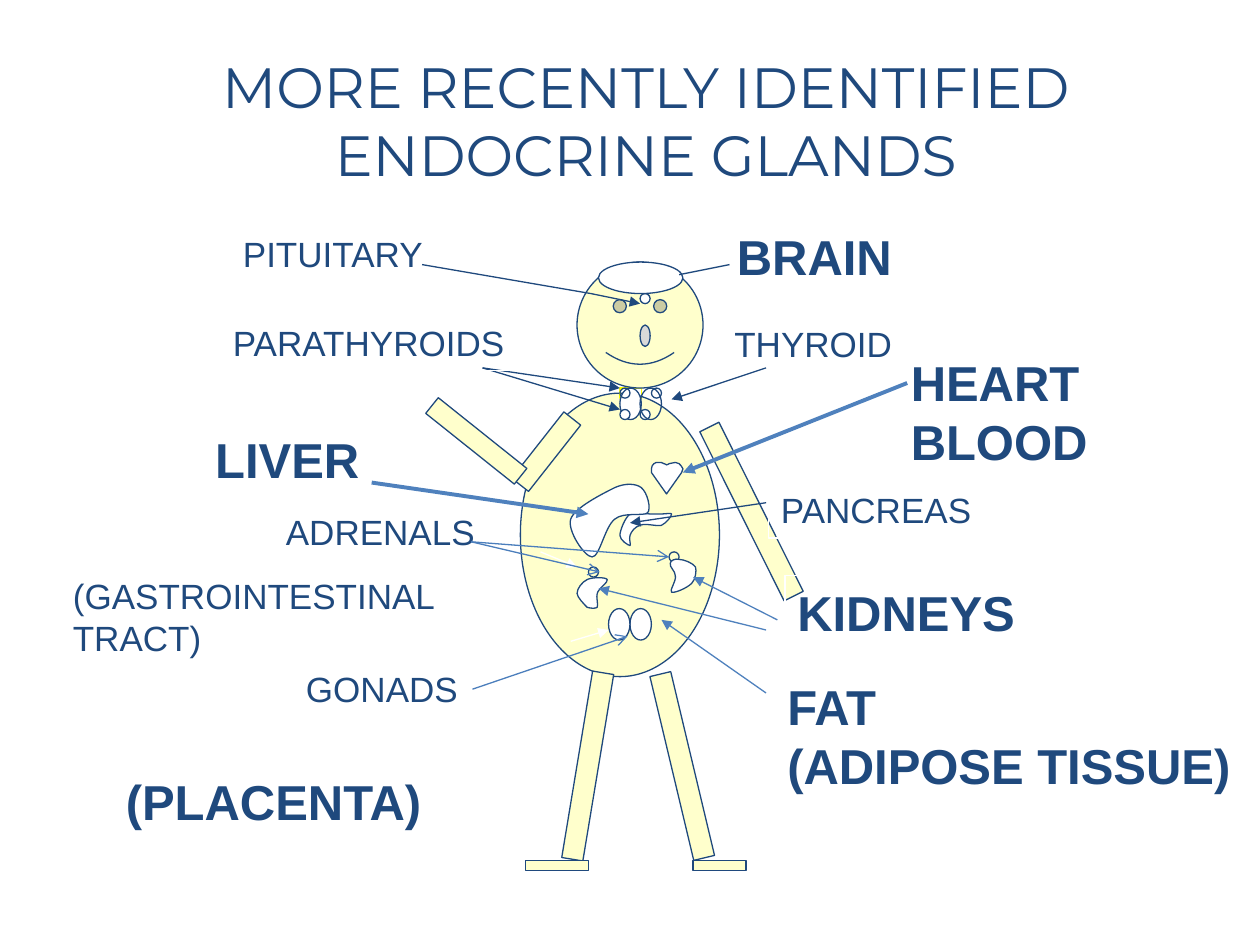
from dataclasses import dataclass

from lxml import etree
from pptx import Presentation
from pptx import util as u
from pptx.dml.color import RGBColor
from pptx.enum import shapes, text
from pptx.oxml import ns


@dataclass(frozen=True)
class Theme:
    navy: str = "1F497D"
    blue: str = "4F81BD"
    soft_blue: str = "4B7EBC"
    skin: str = "FFFFCC"
    white: str = "FFFFFF"
    yellow: str = "FFFF00"
    gray: str = "D9D9D9"
    title_font: str = "Montserrat"
    label_font: str = "Arial"
    title_size: float = 32.4
    label_size: float = 20
    strong_size: float = 28
    thin: float = 0.75
    thick: float = 2.25


theme = Theme()


def style_shape(shape, fill=None, line=theme.navy):
    """Set a flat fill (none when omitted) and a thin outline without shadow."""
    shape.shadow.inherit = False
    if fill:
        shape.fill.solid()
        shape.fill.fore_color.rgb = RGBColor.from_string(fill)
    else:
        shape.fill.background()
    shape.line.color.rgb = RGBColor.from_string(line)
    shape.line.width = u.Pt(theme.thin)


def add_label(words, left, top, width, height, strong=False):
    box = slide.shapes.add_textbox(*map(u.Inches, (left, top, width, height)))
    style_shape(box, line=theme.white)
    frame = box.text_frame
    frame.word_wrap = False
    frame.auto_size = text.MSO_AUTO_SIZE.SHAPE_TO_FIT_TEXT
    frame.text = words
    for paragraph in frame.paragraphs:
        font = paragraph.runs[0].font
        font.name = theme.label_font
        font.size = u.Pt(theme.strong_size if strong else theme.label_size)
        font.bold = strong
        font.color.rgb = RGBColor.from_string(theme.navy)


presentation = Presentation()
presentation.slide_width = u.Inches(10)
presentation.slide_height = u.Inches(7.5)
slide = presentation.slides.add_slide(presentation.slide_layouts[5])

# Title
title = slide.shapes.title
title.left, title.top, title.width, title.height = map(u.Inches, (0.25, 0.33, 9.75, 1.25))
title.fill.solid()
title.fill.fore_color.rgb = RGBColor.from_string(theme.white)
title.text_frame.text = "MORE RECENTLY IDENTIFIED ENDOCRINE GLANDS"
title.text_frame.word_wrap = True
title.text_frame.auto_size = text.MSO_AUTO_SIZE.NONE
title.text_frame.vertical_anchor = text.MSO_ANCHOR.MIDDLE
title_paragraph = title.text_frame.paragraphs[0]
title_paragraph.alignment = text.PP_ALIGN.CENTER
title_font = title_paragraph.runs[0].font
title_font.name = theme.title_font
title_font.size = u.Pt(theme.title_size)
title_font.color.rgb = RGBColor.from_string(theme.navy)

# Body and round glands
rectangle = shapes.MSO_SHAPE.RECTANGLE
oval = shapes.MSO_SHAPE.OVAL
smiley = shapes.MSO_SHAPE.SMILEY_FACE
dot = (0.08, 0.08)
lobe = (0.17, 0.25)
body_parts = [  # kind, box, rotation, fill, line
    (oval, (4.13, 3.12, 1.58, 2.25), 0, theme.skin, theme.navy),  # trunk
    (rectangle, (4.92, 3.08, 0.17, 0.08), 0, None, theme.yellow),  # neck
    (rectangle, (5.33, 5.33, 0.17, 1.5), 346.6, theme.skin, theme.navy),  # legs
    (rectangle, (4.58, 5.33, 0.17, 1.5), 9.4, theme.skin, theme.navy),
    (rectangle, (5.5, 6.83, 0.42, 0.08), 0, theme.skin, theme.navy),  # feet
    (rectangle, (4.17, 6.83, 0.5, 0.08), 0, theme.skin, theme.navy),
    (rectangle, (5.88, 3.31, 0.17, 1.5), 333.5, theme.skin, theme.navy),  # arms
    (rectangle, (4.25, 3.25, 0.17, 0.67), 38.2, theme.skin, theme.navy),
    (rectangle, (3.33, 3.42, 0.9, 0.16), 38.6, theme.skin, theme.navy),
    (oval, (4.92, 3.08, *lobe), 0, theme.white, theme.navy),  # thyroid lobe
    (oval, (4.67, 4.5, *dot), 0, None, theme.navy),  # adrenals
    (oval, (5.31, 4.38, *dot), 0, None, theme.navy),
    (oval, (5, 4.83, *lobe), 0, theme.white, theme.navy),  # gonads
    (oval, (4.83, 4.83, *lobe), 0, theme.white, theme.navy),
    (smiley, (4.58, 2.08, 1, 1), 0, theme.skin, theme.navy),  # head
    (oval, (5.08, 2.33, *dot), 0, theme.white, theme.navy),  # pituitary
    (oval, (5.17, 3.08, *dot), 0, theme.white, theme.navy),  # parathyroids
    (oval, (4.92, 3.08, *dot), 0, None, theme.navy),
    (oval, (4.92, 3.25, *dot), 0, theme.white, theme.navy),
    (oval, (5.08, 3.25, *dot), 0, theme.white, theme.navy),
    (oval, (5.08, 2.58, 0.08, 0.17), 0, theme.gray, theme.navy),  # nose
    (oval, (4.75, 2.08, 0.67, 0.25), 0, theme.white, theme.navy),  # brain
    (oval, (5.08, 3.08, *lobe), 0, None, theme.navy),  # thyroid lobe
]
for kind, box, rotation, fill, line in body_parts:
    part = slide.shapes.add_shape(kind, *map(u.Inches, box))
    part.rotation = rotation
    style_shape(part, fill, line)
    if kind == smiley:
        part.adjustments[0] = 0.047

# Curved organs: a start point, then three Bezier points for each curve
pancreas = [
    (5.25, 4.08), (5.22, 4.08), (5.21, 4.08), (5.17, 4.08), (5.12, 4.08), (5.04, 4.06),
    (5, 4.08), (4.96, 4.11), (4.92, 4.21), (4.92, 4.25), (4.92, 4.29), (4.99, 4.33),
    (5, 4.33), (5.01, 4.33), (4.99, 4.28), (5, 4.25), (5.01, 4.22), (5.04, 4.18),
    (5.08, 4.17), (5.12, 4.15), (5.21, 4.18), (5.25, 4.17), (5.29, 4.15), (5.33, 4.1),
    (5.33, 4.08), (5.33, 4.07), (5.28, 4.08), (5.25, 4.08)]
heart = [
    (5.29, 3.69), (5.29, 3.69), (5.28, 3.68), (5.27, 3.68), (5.26, 3.67), (5.24, 3.67),
    (5.23, 3.67), (5.21, 3.67), (5.2, 3.67), (5.19, 3.68), (5.18, 3.69), (5.17, 3.7),
    (5.17, 3.72), (5.17, 3.73), (5.17, 3.74), (5.17, 3.75), (5.17, 3.75), (5.29, 3.92),
    (5.29, 3.92), (5.29, 3.92), (5.41, 3.75), (5.41, 3.75), (5.42, 3.74), (5.42, 3.73),
    (5.42, 3.72), (5.41, 3.7), (5.4, 3.69), (5.39, 3.68), (5.38, 3.67), (5.37, 3.67),
    (5.36, 3.67), (5.34, 3.67), (5.33, 3.67), (5.31, 3.68), (5.31, 3.68), (5.3, 3.69),
    (5.29, 3.69)]
liver = [
    (5.09, 3.87), (5.05, 3.84), (4.97, 3.83), (4.88, 3.87), (4.78, 3.92), (4.56, 4.03),
    (4.53, 4.12), (4.5, 4.21), (4.64, 4.42), (4.7, 4.42), (4.76, 4.42), (4.8, 4.18),
    (4.88, 4.12), (4.95, 4.06), (5.11, 4.1), (5.14, 4.07), (5.17, 4.04), (5.14, 3.91),
    (5.09, 3.87)]
left_kidney = [
    (4.74, 4.71), (4.75, 4.67), (4.83, 4.62), (4.82, 4.6), (4.81, 4.58), (4.7, 4.58),
    (4.66, 4.6), (4.62, 4.62), (4.58, 4.67), (4.58, 4.71), (4.58, 4.74), (4.64, 4.8),
    (4.66, 4.82), (4.69, 4.83), (4.73, 4.83), (4.74, 4.82), (4.75, 4.8), (4.73, 4.74),
    (4.74, 4.71)]
right_kidney = [
    (5.36, 4.57), (5.37, 4.61), (5.31, 4.69), (5.33, 4.7), (5.35, 4.71), (5.45, 4.67),
    (5.49, 4.63), (5.52, 4.6), (5.53, 4.53), (5.52, 4.5), (5.5, 4.47), (5.43, 4.44),
    (5.39, 4.44), (5.36, 4.43), (5.32, 4.45), (5.32, 4.47), (5.31, 4.5), (5.36, 4.53),
    (5.36, 4.57)]
for points in (pancreas, heart, liver, left_kidney, right_kidney):
    start, *others = [tuple(map(u.Inches, point)) for point in points]
    builder = slide.shapes.build_freeform(*start)
    builder.add_line_segments(others, close=True)
    organ = builder.convert_to_shape()
    style_shape(organ, theme.white)
    # Turn every three straight segments into one cubic curve
    segments = list(organ._element.iter(ns.qn("a:lnTo")))
    for first in range(0, len(segments), 3):
        curve = etree.Element(ns.qn("a:cubicBezTo"))
        segments[first].addprevious(curve)
        for segment in segments[first:first + 3]:
            curve.append(segment[0])
            segment.getparent().remove(segment)

# Labels
add_label("GONADS", 2.33, 5.25, 1.42, 0.44)
add_label("ADRENALS", 2.17, 4, 1.71, 0.44)
add_label("PANCREAS", 6.1, 3.83, 1.74, 0.44)
add_label("THYROID", 5.73, 2.51, 1.46, 0.44)
add_label("PITUITARY", 1.83, 1.8, 1.66, 0.44)
add_label("(GASTROINTESTINAL\nTRACT)", 0.48, 4.51, 3.09, 0.78)
add_label("BLOOD", 7.13, 3.22, 1.62, 0.58, strong=True)
add_label("HEART", 7.13, 2.75, 1.55, 0.58, strong=True)
add_label("LIVER", 1.61, 3.36, 1.36, 0.58, strong=True)
add_label("KIDNEYS", 6.23, 4.57, 1.94, 0.58, strong=True)
add_label("FAT\n(ADIPOSE TISSUE)", 6.15, 5.32, 3.73, 1.05, strong=True)
add_label("(PLACENTA)", 0.9, 6.07, 2.59, 0.58, strong=True)
add_label("BRAIN", 5.75, 1.75, 1.7, 0.58, strong=True)

# Pointers: start and end, colour, width, arrowhead
pointers = [
    ((6.08, 2.92, 5.33, 3.17), theme.navy, theme.thin, "triangle"),  # thyroid
    ((4.29, 4.38, 4.58, 4.5), theme.white, theme.thin, "triangle"),
    ((6.08, 3.99, 5, 4.15), theme.navy, theme.thin, "triangle"),  # pancreas
    ((4.53, 5.09, 4.83, 5), theme.white, theme.thin, "triangle"),
    ((3.35, 2.1, 4.69, 2.33), theme.navy, theme.thin, None),  # pituitary
    ((4.69, 2.33, 5.08, 2.41), theme.navy, theme.thin, "triangle"),
    ((3.83, 2.92, 4.92, 3.08), theme.navy, theme.thin, "triangle"),  # parathyroids
    ((3.83, 2.92, 4.92, 3.25), theme.navy, theme.thin, "triangle"),
    ((7.2, 3.04, 5.42, 3.75), theme.blue, theme.thick, "triangle"),  # heart
    ((2.95, 3.83, 4.67, 4.08), theme.blue, theme.thick, "triangle"),  # liver
    ((6.17, 4.92, 5.5, 4.58), theme.blue, theme.thin, "triangle"),  # kidneys
    ((6.08, 5, 4.75, 4.67), theme.blue, theme.thin, "triangle"),
    ((6.08, 5.5, 5.25, 4.92), theme.blue, theme.thin, "triangle"),  # fat
    ((5.39, 2.18, 5.08, 2.25), theme.white, theme.thick, "triangle"),  # brain
    ((5.39, 2.18, 5.79, 2.1), theme.navy, theme.thin, None),
    ((3.74, 4.3, 5.31, 4.42), theme.soft_blue, theme.thin, "arrow"),  # adrenals
    ((3.74, 4.3, 4.76, 4.54), theme.soft_blue, theme.thin, "arrow"),
    ((3.75, 5.47, 4.98, 5.05), theme.soft_blue, theme.thin, "arrow"),  # gonads
]
for ends, color, width, arrowhead in pointers:
    pointer = slide.shapes.add_connector(shapes.MSO_CONNECTOR.STRAIGHT, *map(u.Inches, ends))
    pointer.line.color.rgb = RGBColor.from_string(color)
    pointer.line.width = u.Pt(width)
    if arrowhead:
        etree.SubElement(pointer.line._get_or_add_ln(), ns.qn("a:tailEnd"), type=arrowhead)
    etree.SubElement(pointer._element.spPr, ns.qn("a:effectLst"))

# The white frame crosses the start of the parathyroid pointers
add_label("PARATHYROIDS", 1.75, 2.5, 2.41, 0.44)

presentation.save("out.pptx")
